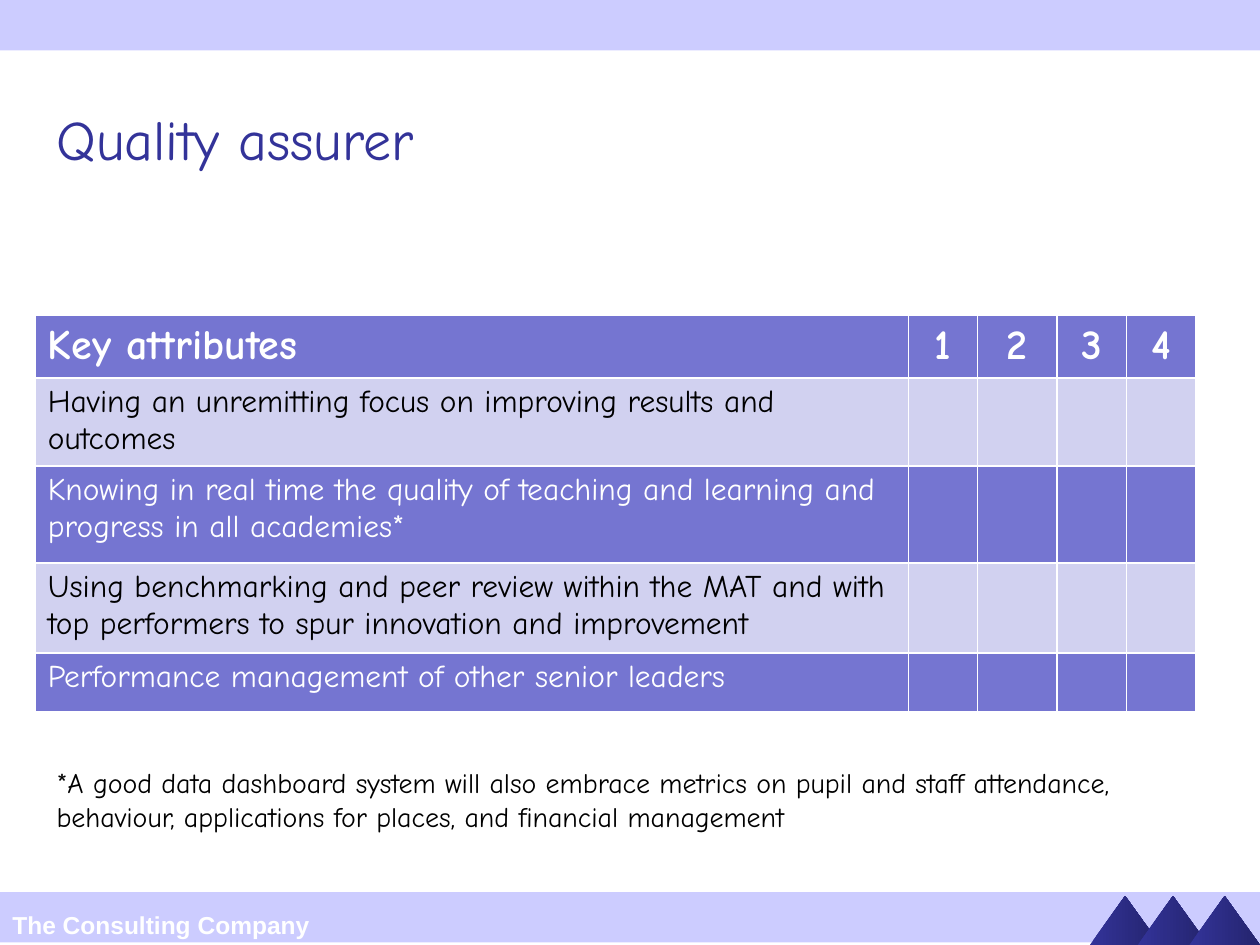
from dataclasses import dataclass

from lxml.etree import SubElement
from pptx import Presentation
from pptx.dml.color import RGBColor
from pptx.enum.shapes import MSO_SHAPE
from pptx.enum.text import MSO_ANCHOR, PP_ALIGN
from pptx.oxml.ns import qn
from pptx.util import Inches, Pt

# Content
TITLE = "Quality assurer"
HEADER = ["Key attributes", "1", "2", "3", "4"]
ATTRIBUTES = [
    "Having an unremitting focus on improving results and outcomes",
    "Knowing in real time the quality of teaching and learning and progress in all academies*",
    "Using benchmarking and peer review within the MAT and with top performers "
    "to spur innovation and improvement",
    "Performance management of other senior leaders",
]
FOOTNOTE = ("*A good data dashboard system will also embrace metrics on pupil and staff "
            "attendance, behaviour, applications for places, and financial management")
FIRM = "The Consulting Company"


@dataclass(frozen=True)
class Theme:
    navy: str = "333399"
    deep: str = "24246D"
    band: str = "CCCCFF"
    strong: str = "7575D1"
    pale: str = "D1D1F0"
    white: str = "FFFFFF"
    black: str = "000000"
    body_font: str = "Comic Neue"
    firm_font: str = "Arial"
    title_size: int = 32
    header_size: int = 24
    row_size: int = 18
    note_size: int = 16
    firm_size: int = 14


THEME = Theme()

# Layout in inches
WIDTH, HEIGHT = 10, 7.5
BAND_HEIGHT = 0.4
MARGIN = 0.35
TABLE_LEFT, TABLE_TOP = 0.28, 2.5
COLUMNS = [6.93, 0.55, 0.63, 0.55, 0.55]
ROWS = [0.48, 0.67, 0.77, 0.71, 0.47]
PEAK_LEFTS = [8.65, 9.03, 9.44]
PEAK_WIDTH, PEAK_HEIGHT = 0.56, 0.39


def write(frame, text, size, color, font=THEME.body_font, bold=False, align=PP_ALIGN.LEFT):
    para = frame.paragraphs[0]
    para.text = text
    para.alignment = align
    para.font.size = Pt(size)
    para.font.name = font
    para.font.bold = bold
    para.font.color.rgb = RGBColor.from_string(color)


def add_text(page, box, *style, anchor=MSO_ANCHOR.TOP, **options):
    frame = page.shapes.add_textbox(*map(Inches, box)).text_frame
    frame.word_wrap = True
    frame.vertical_anchor = anchor
    write(frame, *style, **options)


def add_plain_shape(page, kind, *box):
    shape = page.shapes.add_shape(kind, *map(Inches, box))
    shape.shadow.inherit = False
    shape.line.fill.background()
    return shape


def add_band(page, top):
    band = add_plain_shape(page, MSO_SHAPE.RECTANGLE, 0, top, WIDTH, BAND_HEIGHT)
    band.fill.solid()
    band.fill.fore_color.rgb = RGBColor.from_string(THEME.band)


def add_peak(page, left):
    peak = add_plain_shape(page, MSO_SHAPE.ISOSCELES_TRIANGLE,
                           left, HEIGHT - PEAK_HEIGHT, PEAK_WIDTH, PEAK_HEIGHT)
    peak.fill.gradient()
    peak.fill.gradient_angle = 0
    for stop, color in zip(peak.fill.gradient_stops, (THEME.navy, THEME.deep)):
        stop.color.rgb = RGBColor.from_string(color)


def style_cell(cell, color, top, bottom):
    properties = cell._tc.get_or_add_tcPr()
    for side, points in (("L", 1), ("R", 1), ("T", top), ("B", bottom)):
        line = SubElement(properties, qn(f"a:ln{side}"), w=str(Pt(points)))
        SubElement(SubElement(line, qn("a:solidFill")), qn("a:srgbClr"), val=THEME.white)
    cell.fill.solid()
    cell.fill.fore_color.rgb = RGBColor.from_string(color)


def add_attribute_table(page):
    box = (TABLE_LEFT, TABLE_TOP, sum(COLUMNS), sum(ROWS))
    table = page.shapes.add_table(len(ROWS), len(COLUMNS), *map(Inches, box)).table
    for column, width in zip(table.columns, COLUMNS):
        column.width = Inches(width)
    for row, height in zip(table.rows, ROWS):
        row.height = Inches(height)

    # Fills alternate; inner horizontal rules are heavier than the outer ones
    last = len(ROWS) - 1
    for r, row in enumerate(table.rows):
        for cell in row.cells:
            style_cell(cell, THEME.pale if r % 2 else THEME.strong,
                       1 if r == 0 else 1.5, 1 if r == last else 1.5)

    for c, label in enumerate(HEADER):
        write(table.cell(0, c).text_frame, label, THEME.header_size, THEME.white,
              bold=True, align=PP_ALIGN.CENTER if c else PP_ALIGN.LEFT)
    for r, attribute in enumerate(ATTRIBUTES, start=1):
        write(table.cell(r, 0).text_frame, attribute, THEME.row_size,
              THEME.black if r % 2 else THEME.white)


def main():
    deck = Presentation()
    deck.slide_width, deck.slide_height = Inches(WIDTH), Inches(HEIGHT)
    page = deck.slides.add_slide(deck.slide_layouts[6])

    # Bands, peaks and firm name
    for top in (7.08, 0):
        add_band(page, top)
    for left in PEAK_LEFTS:
        add_peak(page, left)
    add_text(page, (0, 7.17, 2.84, 0.33), FIRM, THEME.firm_size, THEME.white,
             font=THEME.firm_font, bold=True)

    # Title, table and footnote
    add_text(page, (MARGIN, 0.6, WIDTH - MARGIN, 0.99), TITLE, THEME.title_size, THEME.navy,
             anchor=MSO_ANCHOR.MIDDLE)
    add_attribute_table(page)
    add_text(page, (MARGIN, 6.03, 9.29, 0.64), FOOTNOTE, THEME.note_size, THEME.black)

    deck.save("out.pptx")


if __name__ == "__main__":
    main()
